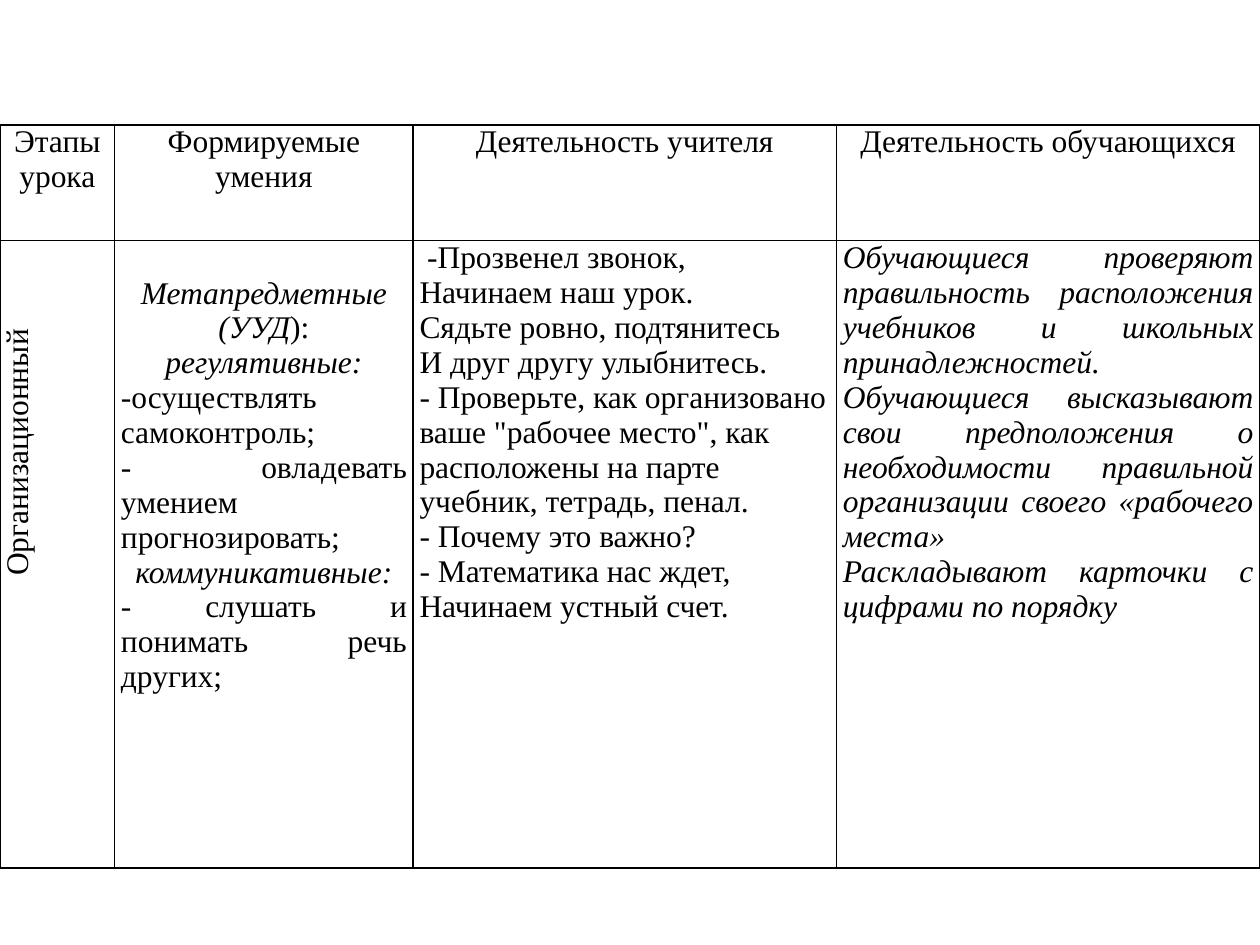
from dataclasses import dataclass
from lxml import etree
from pptx import Presentation
from pptx.dml.color import RGBColor
from pptx.enum.text import MSO_ANCHOR, PP_ALIGN
from pptx.oxml.ns import qn
from pptx.util import Inches, Pt

LEFT, CENTER, JUSTIFY = PP_ALIGN.LEFT, PP_ALIGN.CENTER, PP_ALIGN.JUSTIFY
MIDDLE = MSO_ANCHOR.MIDDLE


@dataclass(frozen=True)
class Theme:
    font: str = "Times New Roman"
    size: int = 18
    ink: str = "000000"
    paper: str = "FFFFFF"
    border: int = 1


THEME = Theme()
SLIDE_W, SLIDE_H = 10, 7.5
TABLE_TOP = 0.99
COLS = [0.91, 2.37, 3.36, 3.36]
ROWS = [0.92, 4.98]
LINE = 0.28
STAGE_OFFSET = 2.27
VERSE_INDENT = 0.06

HEADERS = ["Этапы урока", "Формируемые умения", "Деятельность учителя", "Деятельность обучающихся"]
STAGE = [(LEFT, [("Организационный", False)])]
SKILLS = [
    (CENTER, [("Метапредметные (УУД", True), ("):", False)]),
    (CENTER, [("регулятивные:", True)]),
    (JUSTIFY, [("-осуществлять самоконтроль;", False)]),
    (JUSTIFY, [("- овладевать умением прогнозировать;", False)]),
    (CENTER, [("коммуникативные:", True)]),
    (JUSTIFY, [("- ", True), ("слушать и понимать речь других;", False)]),
]
TEACHER = [
    (LEFT, [("-Прозвенел звонок,\nНачинаем наш урок.\nСядьте ровно, подтянитесь\n"
             "И друг другу улыбнитесь.\n- Проверьте, как организовано ваше \"рабочее место\", "
             "как расположены на парте учебник, тетрадь, пенал.", False)]),
    (JUSTIFY, [("- Почему это важно?", False)]),
    (LEFT, [("- Математика нас ждет,\nНачинаем устный счет.", False)]),
]
PUPILS = [(JUSTIFY, [(text, True)]) for text in (
    "Обучающиеся проверяют правильность расположения учебников и школьных принадлежностей.",
    "Обучающиеся высказывают свои предположения о необходимости правильной организации "
    "своего «рабочего места»",
    "Раскладывают карточки с цифрами по порядку",
)]
GRID = [[[(CENTER, [(h, False)])] for h in HEADERS], [STAGE, SKILLS, TEACHER, PUPILS]]


def add_run(p, text, italic):
    r = p.add_run()
    r.text = text
    f = r.font
    f.name, f.size, f.italic = THEME.font, Pt(THEME.size), italic
    f.color.rgb = RGBColor.from_string(THEME.ink)


def style_cell(cell):
    cell.margin_left = cell.margin_right = Inches(0.05)
    cell.margin_top = cell.margin_bottom = 0
    tcPr = cell._tc.get_or_add_tcPr()
    for side in ("lnL", "lnR", "lnT", "lnB"):
        ln = etree.SubElement(tcPr, qn(f"a:{side}"), w=str(Pt(THEME.border)))
        fill = etree.SubElement(ln, qn("a:solidFill"))
        etree.SubElement(fill, qn("a:srgbClr"), val=THEME.ink)
    cell.fill.solid()
    cell.fill.fore_color.rgb = RGBColor.from_string(THEME.paper)


def fill_cell(cell, paragraphs):
    tf = cell.text_frame
    for i, (align, runs) in enumerate(paragraphs):
        p = tf.add_paragraph() if i else tf.paragraphs[0]
        p.alignment = align
        for text, italic in runs:
            for j, line in enumerate(text.split("\n")):
                if j:
                    p.add_line_break()
                add_run(p, line, italic)


def first_pPr(cell):
    return cell.text_frame.paragraphs[0]._p.get_or_add_pPr()


prs = Presentation()
prs.slide_width, prs.slide_height = Inches(SLIDE_W), Inches(SLIDE_H)
s = prs.slides.add_slide(prs.slide_layouts[6])
table = s.shapes.add_table(len(ROWS), len(COLS), 0, Inches(TABLE_TOP),
                           Inches(sum(COLS)), Inches(sum(ROWS))).table
table.first_row = table.horz_banding = False
for col, width in zip(table.columns, COLS):
    col.width = Inches(width)
for row, height, contents in zip(table.rows, ROWS, GRID):
    row.height = Inches(height)
    for cell, paragraphs in zip(row.cells, contents):
        style_cell(cell)
        fill_cell(cell, paragraphs)

stage, skills, teacher = (table.cell(1, c) for c in range(3))
stage.vertical_anchor = MIDDLE
stage._tc.get_or_add_tcPr().set("vert", "vert270")
first_pPr(stage).set("marL", str(Inches(STAGE_OFFSET)))
skills.margin_top = Inches(LINE)
first_pPr(teacher).set("indent", str(Inches(VERSE_INDENT)))

prs.save("out.pptx")
